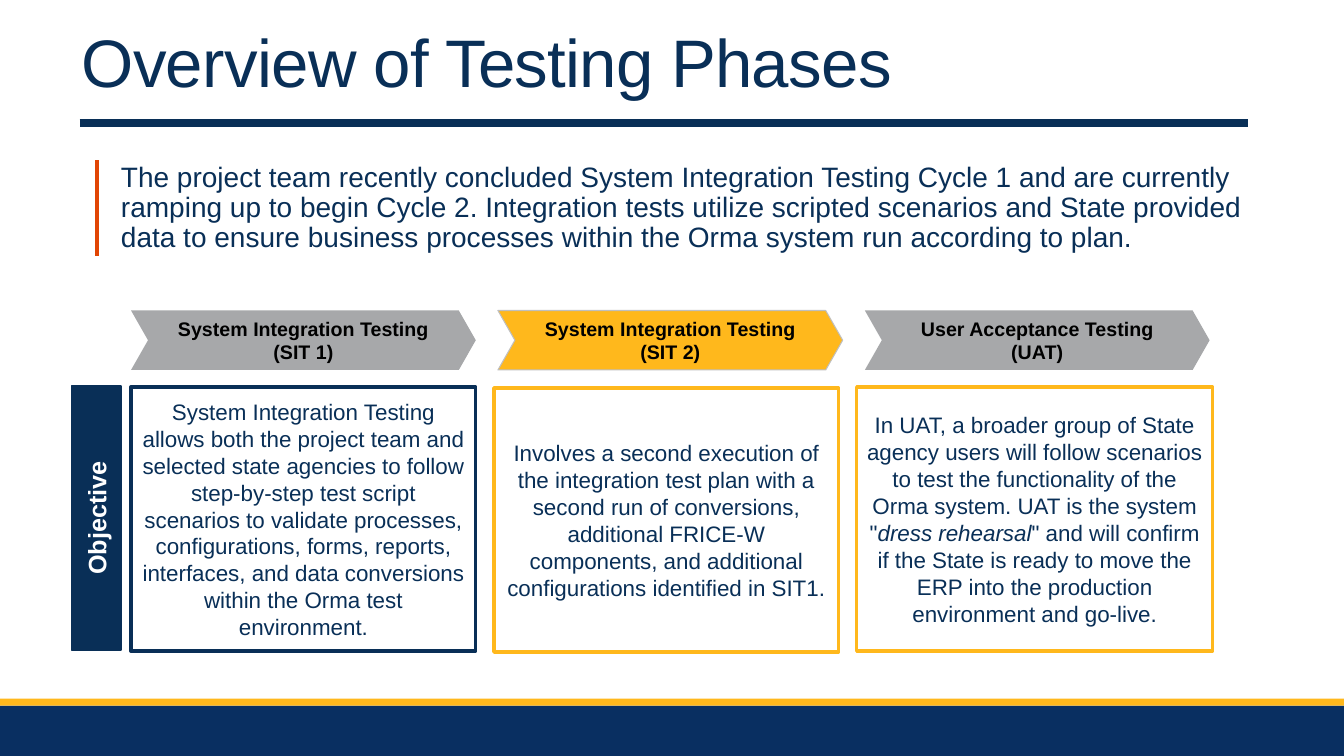
from dataclasses import dataclass

import pptx
import pptx.dml.color
import pptx.enum.shapes
import pptx.enum.text
import pptx.oxml.ns
import pptx.util
from lxml import etree

SHAPE = pptx.enum.shapes.MSO_SHAPE
ALIGN = pptx.enum.text.PP_ALIGN
ANCHOR = pptx.enum.text.MSO_ANCHOR
SLIDE_WIDTH = pptx.util.Inches(13.333)
SLIDE_HEIGHT = pptx.util.Inches(7.5)


@dataclass(frozen=True)
class Theme:
    font: str = "Arial"
    navy: str = "092F57"
    footer: str = "092F61"
    gold: str = "FFB81C"
    orange: str = "E14504"
    gray: str = "A7A8AA"
    outline: str = "BFBFBF"
    white: str = "FFFFFF"
    black: str = "000000"
    title_size: int = 48
    intro_size: int = 20
    label_size: int = 18
    objective_size: int = 16
    phase_size: int = 14


THEME = Theme()
FIRST_LEFT = 9.75
PHASE_STEP, OBJECTIVE_STEP = 27.3, 27
PHASE_WIDTH = 25.65
PHASE_TOP, PHASE_HEIGHT = 41.07, 7.87
OBJECTIVE_TOP, OBJECTIVE_HEIGHT = 51.2, 34.93

PHASES = [
    (["System Integration Testing", "(SIT 1)"], THEME.gray, None),
    (["System Integration Testing", "(SIT 2)"], THEME.gold, THEME.outline),
    (["User Acceptance Testing", "(UAT)"], THEME.gray, None),
]
OBJECTIVES = [
    ("System Integration Testing allows both the project team and selected state "
     "agencies to follow step-by-step test script scenarios to validate processes, "
     "configurations, forms, reports, interfaces, and data conversions within the "
     "Orma test environment.", THEME.navy, 51.2, PHASE_WIDTH),
    ("Involves a second execution of the integration test plan with a second run of "
     "conversions, additional FRICE-W components, and additional configurations "
     "identified in SIT1.", THEME.gold, 51.33, PHASE_WIDTH),
    ("In UAT, a broader group of State agency users will follow scenarios to test the "
     "functionality of the Orma system. UAT is the system \"*dress rehearsal*\" and "
     "will confirm if the State is ready to move the ERP into the production "
     "environment and go-live.", THEME.gold, OBJECTIVE_TOP, 26.48),
]
INTRO = ("The project team recently concluded System Integration Testing Cycle 1 and are "
         "currently ramping up to begin Cycle 2. Integration tests utilize scripted "
         "scenarios and State provided data to ensure business processes within the "
         "Orma system run according to plan.")


def across(share):
    return round(SLIDE_WIDTH * share / 100)


def down(share):
    return round(SLIDE_HEIGHT * share / 100)


def area(left, top, width, height):
    return across(left), down(top), across(width), down(height)


def rgb(color):
    return pptx.dml.color.RGBColor.from_string(color)


def write(holder, paragraphs, *, size, color, bold=False, align=ALIGN.CENTER,
          anchor=ANCHOR.MIDDLE, insets=(0.1, 0.05), wrap=True, line_spacing=None,
          tracking=None, direction=None):
    frame = holder.text_frame
    frame.word_wrap = wrap
    frame.vertical_anchor = anchor
    frame.margin_left = frame.margin_right = pptx.util.Inches(insets[0])
    frame.margin_top = frame.margin_bottom = pptx.util.Inches(insets[1])
    if direction:
        holder.element.find(".//" + pptx.oxml.ns.qn("a:bodyPr")).set("vert", direction)
    for index, text in enumerate(paragraphs):
        paragraph = frame.add_paragraph() if index else frame.paragraphs[0]
        paragraph.alignment = align
        if line_spacing:
            paragraph.line_spacing = line_spacing
        for part, words in enumerate(text.split("*")):
            run = paragraph.add_run()
            run.text = words
            run.font.name = THEME.font
            run.font.size = pptx.util.Pt(size)
            run.font.bold = bold
            run.font.italic = part % 2 == 1
            run.font.color.rgb = rgb(color)
            if tracking:
                run.font._element.set("spc", str(tracking))


def add_block(slide, place, fill, *, kind=SHAPE.RECTANGLE, line=None, line_width=1):
    block = slide.shapes.add_shape(kind, *area(*place))
    block.shadow.inherit = False
    block.fill.solid()
    block.fill.fore_color.rgb = rgb(fill)
    if line:
        block.line.color.rgb = rgb(line)
        block.line.width = pptx.util.Pt(line_width)
    else:
        block.line.fill.background()
    return block


def add_rule(slide, start, end, color, width):
    rule = slide.shapes.add_connector(
        pptx.enum.shapes.MSO_CONNECTOR.STRAIGHT,
        across(start[0]), down(start[1]), across(end[0]), down(end[1]))
    rule.line.color.rgb = rgb(color)
    rule.line.width = pptx.util.Pt(width)
    etree.SubElement(rule.element.spPr, pptx.oxml.ns.qn("a:effectLst"))


def add_text(slide, place, text, **style):
    write(slide.shapes.add_textbox(*area(*place)), [text], align=ALIGN.LEFT, **style)


def add_phase(slide, column, heading, fill, line):
    place = (FIRST_LEFT + column * PHASE_STEP, PHASE_TOP, PHASE_WIDTH, PHASE_HEIGHT)
    phase = add_block(slide, place, fill, kind=SHAPE.CHEVRON, line=line, line_width=0.75)
    phase.adjustments[0] = 0.285
    write(phase, heading, size=THEME.phase_size, color=THEME.black, bold=True,
          insets=(0, 0), wrap=False)


def add_objective(slide, column, text, line, top, width):
    place = (FIRST_LEFT + column * OBJECTIVE_STEP, top, width, OBJECTIVE_HEIGHT)
    objective = add_block(slide, place, THEME.white, line=line, line_width=2.5)
    write(objective, [text], size=THEME.objective_size, color=THEME.navy)


def main():
    deck = pptx.Presentation()
    deck.slide_width, deck.slide_height = SLIDE_WIDTH, SLIDE_HEIGHT
    slide = deck.slides.add_slide(deck.slide_layouts[6])

    add_block(slide, (0, 93.33, 100, 6.67), THEME.footer)
    add_block(slide, (0, 92.4, 100, 0.93), THEME.gold)
    add_text(slide, (5.33, 0, 82.5, 14), "Overview of Testing Phases",
             size=THEME.title_size, color=THEME.navy, anchor=ANCHOR.BOTTOM,
             line_spacing=0.85, tracking=-50)
    add_rule(slide, (5.93, 16.27), (92.85, 16.27), THEME.navy, 6)
    add_text(slide, (9, 20.93, 86.25, 16.8), INTRO, size=THEME.intro_size,
             color=THEME.navy, anchor=ANCHOR.TOP, insets=(0, 0.05), line_spacing=0.9)
    add_rule(slide, (7.2, 21.2), (7.2, 33.87), THEME.orange, 3)

    label = add_block(slide, (5.33, 51.07, 3.68, OBJECTIVE_HEIGHT), THEME.navy,
                      line=THEME.navy)
    write(label, ["Objective"], size=THEME.label_size, color=THEME.white, bold=True,
          direction="vert270")
    for column, phase in enumerate(PHASES):
        add_phase(slide, column, *phase)
    for column, objective in enumerate(OBJECTIVES):
        add_objective(slide, column, *objective)

    deck.save("out.pptx")


if __name__ == "__main__":
    main()
